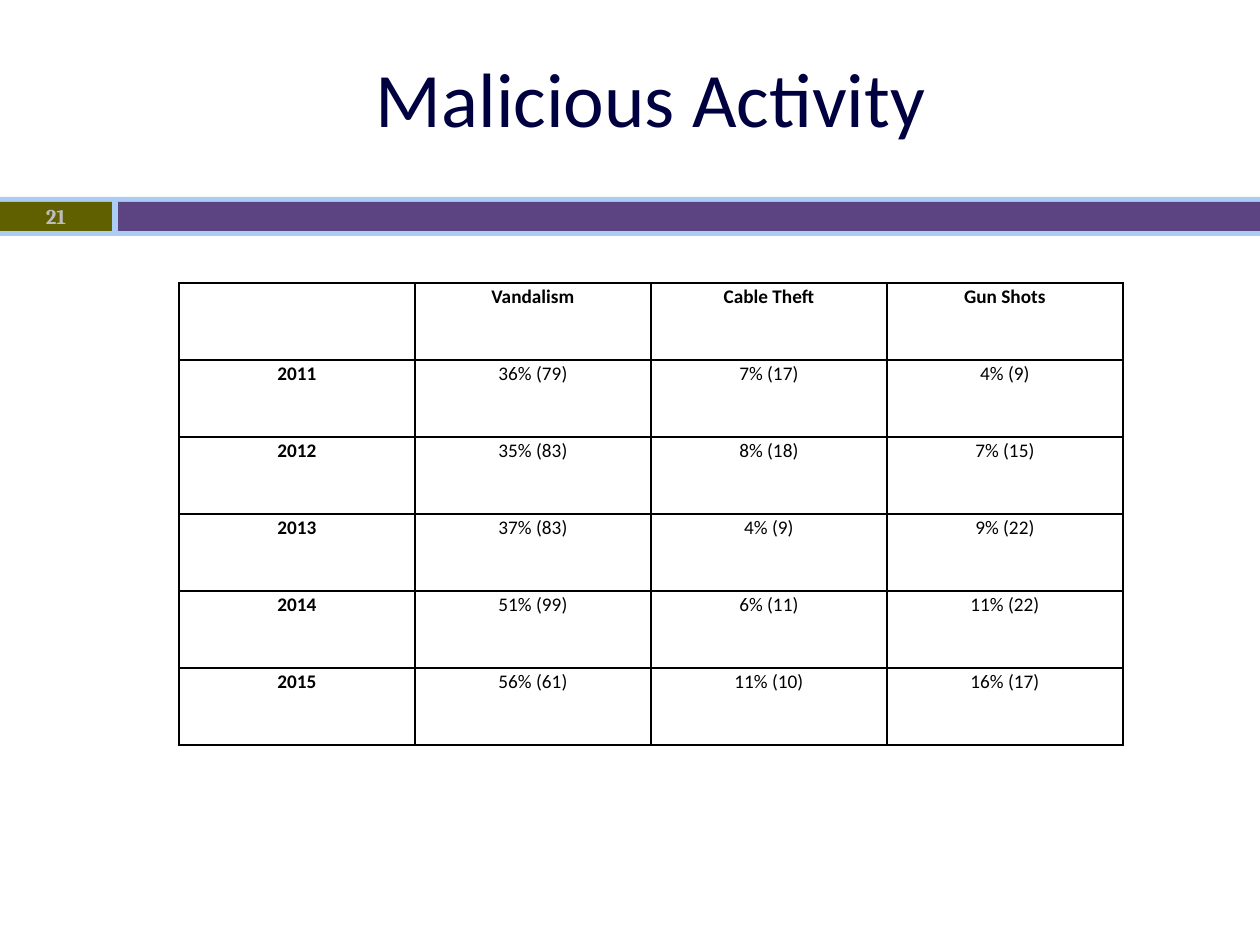
from dataclasses import dataclass

from lxml import etree
from pptx import Presentation
from pptx.dml.color import RGBColor
from pptx.enum.shapes import MSO_SHAPE
from pptx.enum.text import MSO_ANCHOR, PP_ALIGN
from pptx.oxml.ns import qn
from pptx.util import Emu, Pt

RECTANGLE = MSO_SHAPE.RECTANGLE
CENTER = PP_ALIGN.CENTER
MIDDLE = MSO_ANCHOR.MIDDLE
TOP = MSO_ANCHOR.TOP
EMU_PER_PX = 914400 / 126


@dataclass(frozen=True)
class Theme:
    white: str = "FFFFFF"
    black: str = "000000"
    title: str = "000040"
    number: str = "BDBDBD"
    band: str = "ABCDF4"
    olive: str = "606000"
    purple: str = "5C4381"
    body_font: str = "Calibri"
    number_font: str = "Cambria"
    title_size: int = 44
    number_size: int = 12
    table_size: int = 11
    border_width: int = 1


THEME = Theme()

ROWS = [
    ("", "Vandalism", "Cable Theft", "Gun Shots"),
    ("2011", "36% (79)", "7% (17)", "4% (9)"),
    ("2012", "35% (83)", "8% (18)", "7% (15)"),
    ("2013", "37% (83)", "4% (9)", "9% (22)"),
    ("2014", "51% (99)", "6% (11)", "11% (22)"),
    ("2015", "56% (61)", "11% (10)", "16% (17)"),
]


def px(length):
    return Emu(round(length * EMU_PER_PX))


def color(code):
    return RGBColor.from_string(code)


def format_para(para, font, size, code, bold=False):
    para.alignment = CENTER
    for span in para.runs:
        span.font.name = font
        span.font.size = Pt(size)
        span.font.bold = bold
        span.font.color.rgb = color(code)


def add_bar(page, left, top, width, height, fill):
    bar = page.shapes.add_shape(RECTANGLE, px(left), px(top), px(width), px(height))
    bar.shadow.inherit = False
    bar.fill.solid()
    bar.fill.fore_color.rgb = color(fill)
    bar.line.fill.background()


def add_text(page, text, left, top, width, height, font, size, code, bold=False):
    box = page.shapes.add_textbox(px(left), px(top), px(width), px(height))
    frame = box.text_frame
    frame.word_wrap = True
    frame.vertical_anchor = MIDDLE
    frame.text = text
    format_para(frame.paragraphs[0], font, size, code, bold)


def set_borders(cell):
    properties = cell._tc.get_or_add_tcPr()
    for position, side in enumerate(("a:lnL", "a:lnR", "a:lnT", "a:lnB")):
        line = etree.Element(qn(side), w=str(Pt(THEME.border_width)))
        fill = etree.SubElement(line, qn("a:solidFill"))
        etree.SubElement(fill, qn("a:srgbClr"), val=THEME.black)
        properties.insert(position, line)


def fill_cell(cell, text, bold):
    cell.margin_left = cell.margin_right = px(9)
    cell.margin_top = cell.margin_bottom = 0
    cell.vertical_anchor = TOP
    cell.fill.solid()
    cell.fill.fore_color.rgb = color(THEME.white)
    set_borders(cell)
    cell.text_frame.text = text
    para = cell.text_frame.paragraphs[0]
    para.line_spacing = 1.07
    format_para(para, THEME.body_font, THEME.table_size, THEME.black, bold)


def add_grid(page, rows, left, top, column_width, row_height):
    column_count = len(rows[0])
    table = page.shapes.add_table(
        len(rows), column_count, px(left), px(top),
        px(column_width * column_count), px(row_height * len(rows))).table
    for column in table.columns:
        column.width = px(column_width)
    for r, values in enumerate(rows):
        table.rows[r].height = px(row_height)
        for c, value in enumerate(values):
            # Column heads and years are bold
            fill_cell(table.cell(r, c), value, bold=r == 0 or c == 0)


def main():
    deck = Presentation()
    deck.slide_width, deck.slide_height = px(1260), px(945)
    page = deck.slides.add_slide(deck.slide_layouts[6])

    # Divider band
    add_bar(page, 0, 197, 1260, 39, THEME.band)
    add_bar(page, 0, 202, 112, 29, THEME.olive)
    add_bar(page, 118, 202, 1142, 29, THEME.purple)

    # Title and page number
    add_text(page, "Malicious Activity", 131, 21, 1040, 151,
             THEME.body_font, THEME.title_size, THEME.title)
    add_text(page, "21", 0, 197, 112, 39,
             THEME.number_font, THEME.number_size, THEME.number, bold=True)

    # Incidents by year
    add_grid(page, ROWS, 179, 283, 236, 77)

    deck.save("out.pptx")


if __name__ == "__main__":
    main()
